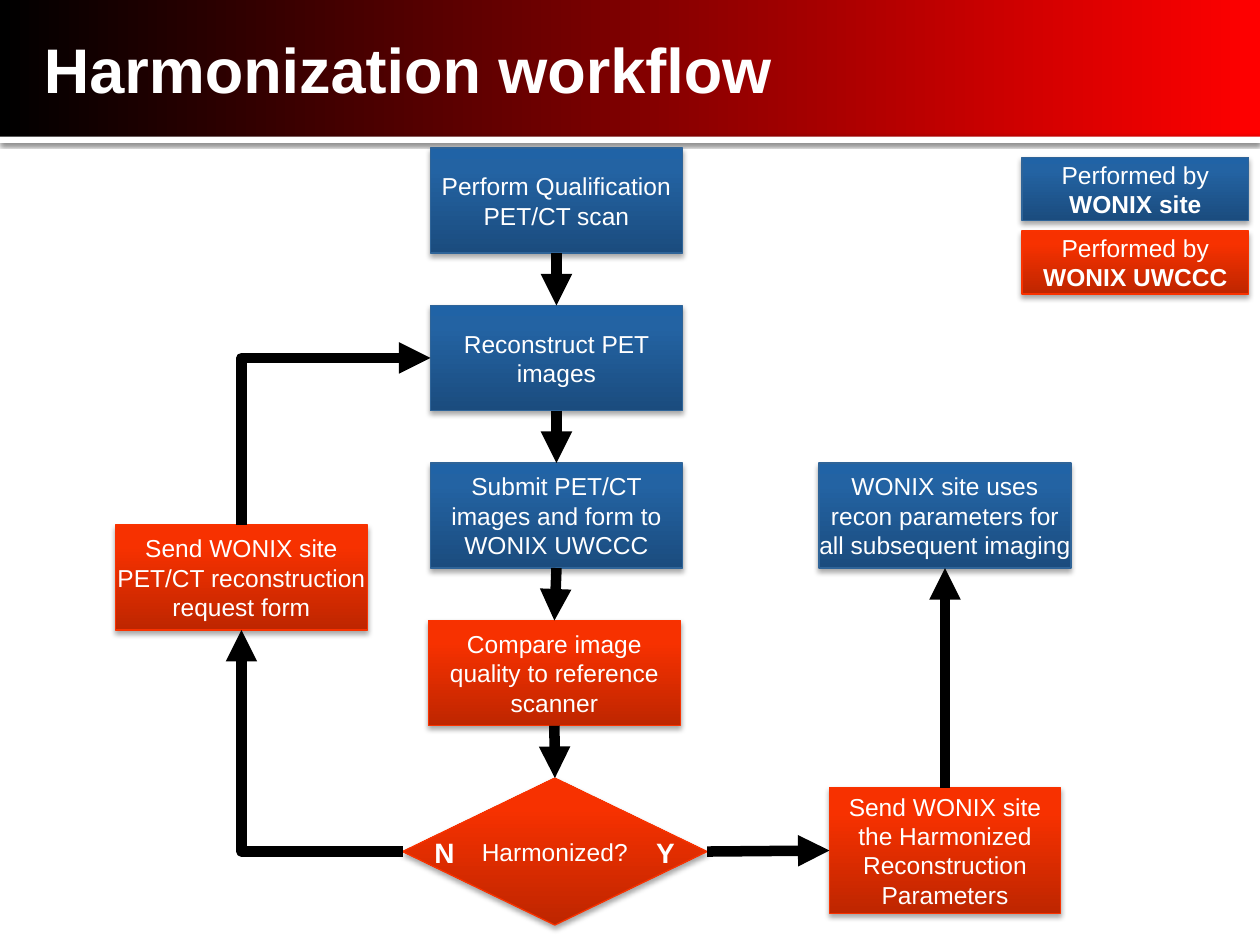
"""Build the harmonization workflow slide."""
from copy import deepcopy

from lxml.etree import SubElement
from pptx import Presentation
from pptx.dml.color import RGBColor
from pptx.enum.shapes import MSO_CONNECTOR, MSO_SHAPE
from pptx.enum.text import MSO_ANCHOR, PP_ALIGN
from pptx.oxml.ns import qn
from pptx.util import Pt

BLACK = RGBColor(0x00, 0x00, 0x00)
WHITE = RGBColor(0xFF, 0xFF, 0xFF)
RED = RGBColor(0xFF, 0x00, 0x00)
SITE_LINE = RGBColor(0x2F, 0x64, 0x98)
SITE_STOPS = [(0, RGBColor(0x1B, 0x4C, 0x7E)), (0.8, RGBColor(0x23, 0x63, 0xA3)),
              (1, RGBColor(0x20, 0x63, 0xA6))]
CENTER_LINE = RGBColor(0xF9, 0x32, 0x00)
CENTER_STOPS = [(0, RGBColor(0xBE, 0x26, 0x00)), (0.8, RGBColor(0xF7, 0x31, 0x00)),
                (1, RGBColor(0xF8, 0x32, 0x00))]
SITE = (SITE_STOPS, SITE_LINE)
CENTER = (CENTER_STOPS, CENTER_LINE)

BOX_WIDTH, BOX_HEIGHT = 144, 60
STEP_LEFT, STEP_TOP, STEP_PITCH = 246, 84.6, 90
step_tops = [STEP_TOP + STEP_PITCH * index for index in range(5)]


def fill_gradient(shape, stops, angle):
    shape.fill.gradient()
    shape.fill.gradient_angle = angle
    stop_list = shape._element.spPr.find(qn("a:gradFill")).find(qn("a:gsLst"))
    while len(stop_list) < len(stops):
        stop_list.append(deepcopy(stop_list[0]))
    for stop, (position, color) in zip(shape.fill.gradient_stops, stops):
        stop.position = position
        stop.color.rgb = color


def add_shadow(shape, blur, distance, opacity):
    shape.shadow.inherit = False
    effects = shape._element.spPr.find(qn("a:effectLst"))
    shadow = SubElement(effects, qn("a:outerShdw"), blurRad=str(Pt(blur)), dist=str(Pt(distance)),
                        dir="5400000", rotWithShape="0")
    color = SubElement(shadow, qn("a:srgbClr"), val=str(BLACK))
    SubElement(color, qn("a:alpha"), val=str(opacity * 1000))


presentation = Presentation()
presentation.slide_width = Pt(720)
presentation.slide_height = Pt(540)
slide = presentation.slides.add_slide(presentation.slide_layouts[6])
shapes = slide.shapes

band = shapes.add_shape(MSO_SHAPE.RECTANGLE, 0, 0, Pt(720), Pt(79.2))
band.shadow.inherit = False
band.line.fill.background()
fill_gradient(band, [(0, BLACK), (1, RED)], 0)

stripe = shapes.add_shape(MSO_SHAPE.RECTANGLE, 0, Pt(78), Pt(720), Pt(3.6))
stripe.fill.solid()
stripe.fill.fore_color.rgb = WHITE
stripe.line.fill.background()
add_shadow(stripe, 2.5, 0.8, 60)

RECTANGLE, DECISION = MSO_SHAPE.RECTANGLE, MSO_SHAPE.FLOWCHART_DECISION
boxes = {}
for name, kind, style, left, top, width, height, text, bold_text in [
    ("scan", RECTANGLE, SITE, STEP_LEFT, step_tops[0], BOX_WIDTH, BOX_HEIGHT,
     "Perform Qualification PET/CT scan", ""),
    ("reconstruct", RECTANGLE, SITE, STEP_LEFT, step_tops[1], BOX_WIDTH, BOX_HEIGHT,
     "Reconstruct PET images", ""),
    ("submit", RECTANGLE, SITE, STEP_LEFT, step_tops[2], BOX_WIDTH, BOX_HEIGHT,
     "Submit PET/CT images and form to WONIX UWCCC", ""),
    ("compare", RECTANGLE, CENTER, 244.8, step_tops[3], BOX_WIDTH, BOX_HEIGHT,
     "Compare image quality to reference scanner", ""),
    ("decision", DECISION, CENTER, 230.1, step_tops[4], 174, 84, "Harmonized?", ""),
    ("request", RECTANGLE, CENTER, 66, 300, BOX_WIDTH, BOX_HEIGHT,
     "Send WONIX site PET/CT reconstruction request form", ""),
    ("parameters", RECTANGLE, CENTER, 474, 450, 132, 72,
     "Send WONIX site the Harmonized Reconstruction Parameters", ""),
    ("imaging", RECTANGLE, SITE, 468, step_tops[2], BOX_WIDTH, BOX_HEIGHT,
     "WONIX site uses recon parameters for all subsequent imaging", ""),
    ("site legend", RECTANGLE, SITE, 584, 90, 129.6, 36, "Performed by ", "WONIX site"),
    ("center legend", RECTANGLE, CENTER, 584, 132, 129.6, 36, "Performed by ", "WONIX UWCCC"),
]:
    box = shapes.add_shape(kind, Pt(left), Pt(top), Pt(width), Pt(height))
    stops, line_color = style
    fill_gradient(box, stops, 90)
    box.line.color.rgb = line_color
    box.line.width = Pt(0.75)
    add_shadow(box, 3.1, 1.8, 35)
    frame = box.text_frame
    frame.word_wrap = True
    frame.vertical_anchor = MSO_ANCHOR.MIDDLE
    frame.margin_left = frame.margin_right = frame.margin_top = frame.margin_bottom = 0
    paragraph = frame.paragraphs[0]
    paragraph.alignment = PP_ALIGN.CENTER
    paragraph.font.name = "Arial"
    paragraph.font.size = Pt(14)
    paragraph.font.color.rgb = WHITE
    paragraph.add_run().text = text
    if bold_text:
        run = paragraph.add_run()
        run.text = bold_text
        run.font.bold = True
    boxes[name] = box

arrows = []
for start, start_side, end, end_side in [
    ("scan", 2, "reconstruct", 0),
    ("reconstruct", 2, "submit", 0),
    ("submit", 2, "compare", 0),
    ("compare", 2, "decision", 0),
    ("decision", 3, "parameters", 1),
    ("parameters", 0, "imaging", 2),
]:
    arrow = shapes.add_connector(MSO_CONNECTOR.STRAIGHT, 0, 0, 0, 0)
    arrow.begin_connect(boxes[start], start_side)
    arrow.end_connect(boxes[end], end_side)
    arrows.append(arrow)

for begin_x, begin_y, end_x, end_y, rotation in [
    (230.1, 486.6, 138, 360, 0),
    (239.7, 306.3, 144.3, 198.3, 90),
]:
    arrow = shapes.add_connector(MSO_CONNECTOR.ELBOW, Pt(begin_x), Pt(begin_y), Pt(end_x), Pt(end_y))
    properties = arrow._element.spPr
    properties.find(qn("a:prstGeom")).set("prst", "bentConnector2")
    properties.find(qn("a:xfrm")).set("rot", str(rotation * 60000))
    arrows.append(arrow)

for arrow in arrows:
    arrow.line.color.rgb = BLACK
    arrow.line.width = Pt(6)
    properties = arrow._element.spPr
    line = properties.find(qn("a:ln"))
    SubElement(line, qn("a:round"))
    SubElement(line, qn("a:tailEnd"), type="triangle")
    SubElement(properties, qn("a:effectLst"))

for text, left, top, width, height, size, wrap in [
    ("Harmonization workflow", 18, 0, 642, 78, 36, True),
    ("Y", 367.9, 473.8, 25.2, 26.6, 16, False),
    ("N", 241.2, 473.8, 25.9, 26.6, 16, False),
]:
    label = shapes.add_textbox(Pt(left), Pt(top), Pt(width), Pt(height))
    label.text_frame.word_wrap = wrap
    label.text_frame.vertical_anchor = MSO_ANCHOR.MIDDLE
    paragraph = label.text_frame.paragraphs[0]
    paragraph.text = text
    paragraph.font.name = "Arial"
    paragraph.font.size = Pt(size)
    paragraph.font.bold = True
    paragraph.font.color.rgb = WHITE

presentation.save("out.pptx")
